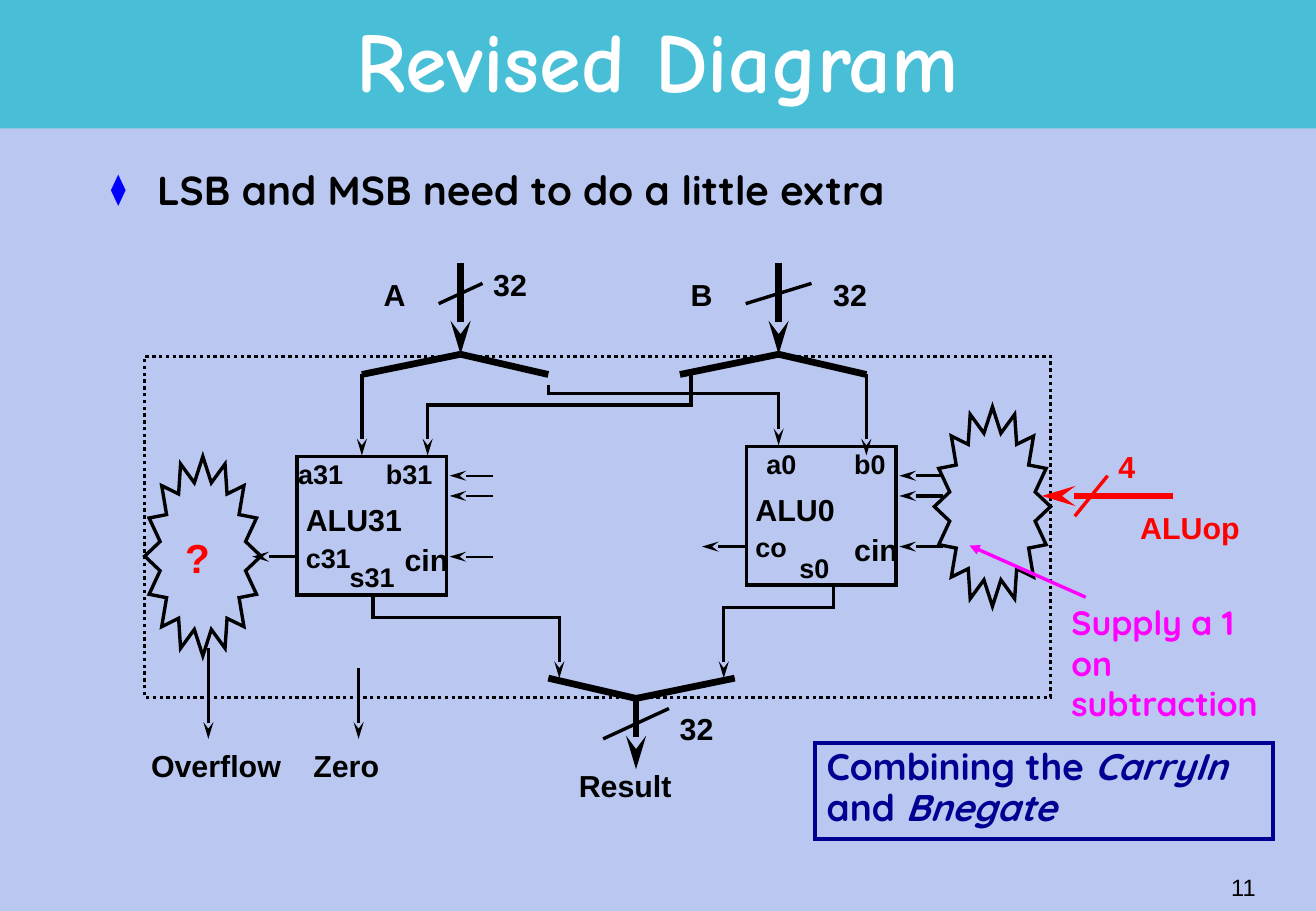
from dataclasses import dataclass

from lxml.etree import SubElement
from pptx import Presentation
from pptx.dml.color import RGBColor
from pptx.enum.dml import MSO_LINE_DASH_STYLE as Dash
from pptx.enum.shapes import MSO_CONNECTOR as Link, MSO_SHAPE as Kind
from pptx.enum.text import MSO_ANCHOR as Anchor, MSO_AUTO_SIZE as Fit, PP_ALIGN as Align
from pptx.oxml.ns import qn
from pptx.util import Inches, Pt

COLS, ROWS = 120, 90


@dataclass(frozen=True)
class Theme:
    back: str = "BAC8F1"
    band: str = "49BFD7"
    ink: str = "000000"
    white: str = "FFFFFF"
    red: str = "FF0000"
    pink: str = "FF00FF"
    navy: str = "000092"
    blue: str = "0000FF"
    head: str = "Comic Neue"
    prose: str = "Quicksand"
    plain: str = "Arial"
    title: int = 50
    body: int = 24
    note: int = 22
    hint: int = 20
    label: int = 18
    port: int = 16
    page: int = 14
    thick: float = 4
    line: float = 2
    thin: float = 1


class Board:
    def __init__(self, deck, theme):
        self.theme = theme
        self.wide = deck.slide_width / COLS
        self.high = deck.slide_height / ROWS
        self.slide = deck.slides.add_slide(deck.slide_layouts[1])
        self.shapes = self.slide.shapes
        self.paint(self.slide.background.fill, theme.back)

    def paint(self, fill, color):
        fill.solid()
        fill.fore_color.rgb = RGBColor.from_string(color)

    def point(self, col, row):
        return round(col * self.wide), round(row * self.high)

    def area(self, col, row, cols, rows):
        return *self.point(col, row), *self.point(cols, rows)

    def stroke(self, shape, color, width, dash=None, tip=None):
        self.paint(shape.line.fill, color)
        shape.line.width = Pt(width)
        if dash:
            shape.line.dash_style = dash
        edge = shape.element.spPr.find(qn("a:ln"))
        SubElement(edge, qn("a:miter"), lim="800000")
        if tip:
            size = "lg" if tip == "stealth" else "med"
            SubElement(edge, qn("a:tailEnd"), type=tip, w="med", len=size)

    def form(self, kind, area, fill=None, dash=None):
        shape = self.shapes.add_shape(kind, *self.area(*area))
        shape.shadow.inherit = False
        if fill:
            self.paint(shape.fill, fill)
            shape.line.fill.background()
        else:
            shape.fill.background()
            self.stroke(shape, self.theme.ink, self.theme.line, dash)
        return shape

    def wire(self, *spots, width=None, color=None, tip="stealth"):
        spots = [self.point(*spot) for spot in spots]
        if len(spots) == 2:
            shape = self.shapes.add_connector(Link.STRAIGHT, *spots[0], *spots[1])
        else:
            pen = self.shapes.build_freeform(*spots[0])
            pen.add_line_segments(spots[1:], close=False)
            shape = pen.convert_to_shape()
            shape.fill.background()
            shape.shadow.inherit = False
        self.stroke(shape, color or self.theme.ink, width or self.theme.line, tip=tip)
        if len(spots) == 2:
            SubElement(shape.element.spPr, qn("a:effectLst"))

    def letter(self, shape, words, size, font=None, color=None, bold=True,
               align=Align.LEFT, lead=1.0, wrap=True, pad=(0.1, 0.05),
               anchor=Anchor.TOP, bullet=None):
        frame = shape.text_frame
        frame.auto_size = Fit.NONE
        frame.word_wrap = wrap
        frame.vertical_anchor = anchor
        frame.margin_left = frame.margin_right = Inches(pad[0])
        frame.margin_top = frame.margin_bottom = Inches(pad[1])
        para = frame.paragraphs[0]
        for part, slant in [(words, None)] if isinstance(words, str) else words:
            run = para.add_run()
            run.text = part
            if slant:
                run.font.italic = True
        para.alignment = align
        para.line_spacing = lead
        para.space_before = Pt(0)
        if bullet:
            self.mark(para, bullet)
        para.font.name = font or self.theme.plain
        para.font.size = Pt(size)
        para.font.bold = bold
        self.paint(para.font.fill, color or self.theme.ink)

    def mark(self, para, sign):
        props = para._p.get_or_add_pPr()
        props.set("marL", str(Inches(0.38)))
        props.set("indent", str(-Inches(0.38)))
        SubElement(SubElement(props, qn("a:buClr")), qn("a:srgbClr"), val=self.theme.blue)
        SubElement(props, qn("a:buSzPct"), val="75000")
        SubElement(props, qn("a:buChar"), char=sign)

    def text(self, area, words, size, **style):
        box = self.shapes.add_textbox(*self.area(*area))
        self.letter(box, words, size, **style)
        return box

    def label(self, col, row, cols, words, color=None):
        self.text((col, row, cols, 3.7), words, self.theme.label, color=color,
                  lead=0.85, wrap=False, pad=(0.07, 0.03))

    def hold(self, index, area, words, size, **style):
        shape = self.slide.placeholders[index]
        shape.left, shape.top, shape.width, shape.height = self.area(*area)
        self.letter(shape, words, size, **style)
        return shape

    def unit(self, col, row, name, wide, ports):
        size = self.theme
        self.form(Kind.RECTANGLE, (col + 0.1, row + 0.1, 13.6, 13.7))
        self.text((col - 0.2, row + 3.9, wide, 4.8), name, size.label, wrap=False)
        self.text((col + 8.8, row + 7.9, 6.2, 4.8), "cin", size.label, wrap=False)
        for word, right, down, cols in ports:
            self.text((col + right, row + down, cols, 4.4), word, size.port, wrap=False)


def main():
    deck = Presentation()
    deck.slide_width, deck.slide_height = Inches(10.83), Inches(7.5)
    look = Theme()
    board = Board(deck, look)

    title = board.hold(0, (9, 0.6, 102, 11.9), "Revised Diagram", look.title,
                       font=look.head, color=look.white, align=Align.CENTER,
                       lead=0.85, anchor=Anchor.MIDDLE)
    band = board.form(Kind.RECTANGLE, (0, 0, COLS, 12.7), fill=look.band)
    title.element.addprevious(band.element)
    board.hold(1, (9, 16.2, 102, 66.7), "LSB and MSB need to do a little extra",
               look.body, font=look.prose, lead=0.9, bullet="⧫")

    board.form(Kind.RECTANGLE, (13.2, 35.2, 82.6, 33.7), dash=Dash.ROUND_DOT)
    for col, row in [(85.2, 40.2), (13.2, 45.1)]:
        board.form(Kind.STAR_16_POINT, (col, row, 10.6, 19.7))
    board.unit(68, 44, "ALU0", 10.3, [("a0", 0.8, -0.4, 5.4), ("b0", 8.8, -0.4, 5.5),
                                      ("co", -0.2, 7.8, 5.5), ("s0", 3.8, 9.9, 5.4)])
    board.unit(27, 45, "ALU31", 12, [("a31", -0.9, -0.4, 6.9), ("b31", 7.1, -0.4, 7),
                                     ("c31", -0.2, 7.9, 6.9), ("s31", 3.8, 9.8, 6.9)])

    for start, end in [((42, 26), (42, 35)), ((71, 26), (71, 35)), ((58, 69), (58, 76))]:
        board.wire(start, end, width=look.thick)
    board.wire((107, 49), (95, 49), width=look.thick, color=look.red)
    for hub, row, ends in [(42, 35, (33, 50)), (71, 35, (62, 79)), (58, 69, (50, 67))]:
        edge = 37 if row == 35 else 67
        for end in ends:
            board.wire((hub, row), (end, edge), width=look.thick, tip=None)
    for start, end in [((68, 30), (74, 28)), ((40, 30), (44, 28)), ((55, 73), (61, 70))]:
        board.wire(start, end, tip=None)
    board.wire((98, 51), (101, 47), color=look.red, tip=None)

    for route in [
        [(33, 37), (33, 45)],
        [(79, 37), (79, 45)],
        [(50, 38), (50, 38.9), (71, 38.9), (71, 44)],
        [(63, 37), (63, 40), (39, 40), (39, 45)],
        [(34, 59), (34, 61), (51, 61), (51, 67)],
        [(76, 58), (76, 60), (66, 60), (66, 67)],
        [(19, 64), (19, 73)],
        [(32.7, 66), (32.7, 73)],
    ]:
        board.wire(*route)
    for col, row, width in [(68, 54, look.line), (27, 55, look.line),
                            *[(86, row, look.line) for row in (47, 49, 54)],
                            *[(45, row, look.thin) for row in (47, 49, 55)]]:
        board.wire((col, row), (col - 4, row), width=width)
    board.wire((99, 59), (88.4, 53.9), color=look.pink, tip="triangle")

    for col, row, cols, words in [
        (34.2, 27.5, 3.9, "A"), (62.2, 27.5, 3.9, "B"),
        (44.2, 26.5, 5, "32"), (75.2, 27.5, 5, "32"), (61.2, 70.4, 5, "32"),
        (52, 76, 10.9, "Result"), (13, 74, 14.5, "Overflow"), (27.8, 74, 8.2, "Zero"),
    ]:
        board.label(col, row, cols, words)
    board.label(101.2, 44.5, 3.1, "4", look.red)
    board.label(103.2, 50.5, 10.6, "ALUop", look.red)
    board.text((15.8, 52.1, 4.9, 6), "?", look.body, color=look.red, wrap=False)
    board.text((96.6, 58.9, 20.2, 13.2), "Supply a 1 on subtraction", look.hint,
               font=look.prose, color=look.pink)
    note = board.text((74.3, 73.4, 41.8, 9.5),
                      [("Combining the ", False), ("CarryIn ", True),
                       ("and ", False), ("Bnegate", True)],
                      look.note, font=look.prose, color=look.navy, lead=0.9)
    board.stroke(note, look.navy, 2.25)
    board.text((90.6, 84.6, 25, 6), "11", look.page, bold=False,
               align=Align.RIGHT, anchor=Anchor.MIDDLE)
    deck.save("out.pptx")


if __name__ == "__main__":
    main()
